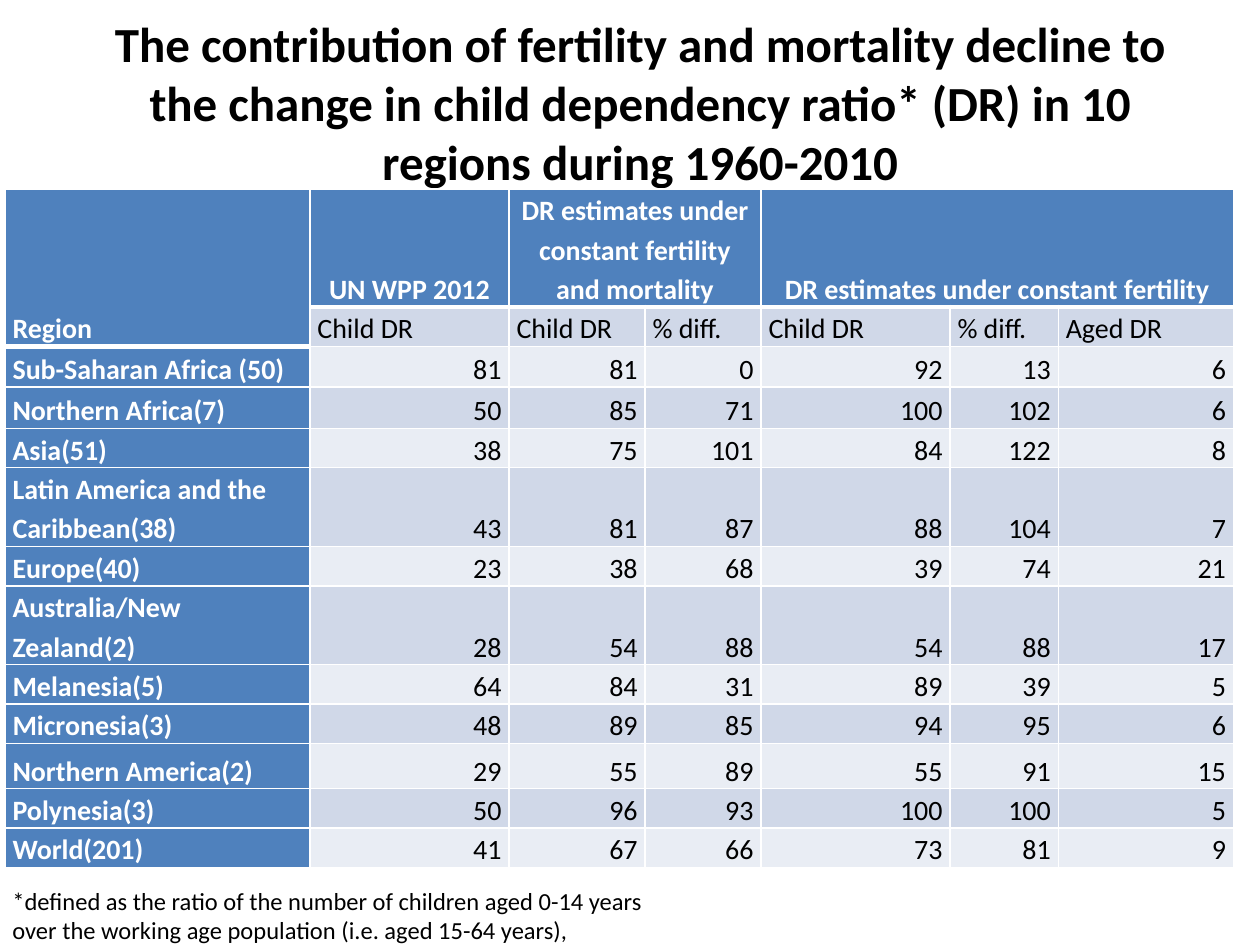
from pptx import Presentation
from pptx.dml.color import RGBColor
from pptx.enum.text import MSO_ANCHOR as Anchor, MSO_AUTO_SIZE as AutoSize, PP_ALIGN as Align
from pptx.oxml import parse_xml
from pptx.oxml.ns import nsdecls
from pptx.util import Inches, Pt

BLACK, WHITE, BLUE = "000000", "FFFFFF", "4F81BD"
BANDS = ("D0D8E8", "E9EDF4")


def color(hex_code):
    return RGBColor.from_string(hex_code)


class RatioSlide:
    """Holds the style and the slide; places and sizes are percent of the slide."""

    font_name = "Calibri"

    def __init__(self, deck):
        self.width, self.height = deck.slide_width, deck.slide_height
        self.slide = deck.slides.add_slide(deck.slide_layouts[5])

    def x(self, percent):
        return round(self.width * percent / 100)

    def y(self, percent):
        return round(self.height * percent / 100)

    def box(self, left, top, width, height):
        return self.x(left), self.y(top), self.x(width), self.y(height)

    def set_text(self, frame, text, size, ink=BLACK, bold=False, align=Align.LEFT, spacing=None):
        frame.word_wrap = True
        paragraph = frame.paragraphs[0]
        paragraph.text = text
        paragraph.alignment = align
        paragraph.line_spacing = spacing
        font = paragraph.font
        font.name, font.size, font.bold = self.font_name, Pt(size), bold
        font.color.rgb = color(ink)

    def title(self, text, place):
        heading = self.slide.shapes.title
        heading.left, heading.top, heading.width, heading.height = self.box(*place)
        frame = heading.text_frame
        frame.auto_size = AutoSize.NONE
        frame.vertical_anchor = Anchor.MIDDLE
        frame.margin_bottom = Inches(0.52)
        self.set_text(frame, text, 28, bold=True, align=Align.CENTER)

    def note(self, text, place):
        frame = self.slide.shapes.add_textbox(*self.box(*place)).text_frame
        self.set_text(frame, text, 14)
        frame.auto_size = AutoSize.SHAPE_TO_FIT_TEXT

    def borders(self, cell, bottom):
        properties = cell._tc.get_or_add_tcPr()
        for side, points in (("L", 1), ("R", 1), ("T", 1), ("B", bottom)):
            properties.append(parse_xml(
                f'<a:ln{side} {nsdecls("a")} w="{Pt(points)}"><a:solidFill>'
                f'<a:srgbClr val="{WHITE}"/></a:solidFill></a:ln{side}>'))

    def cell(self, cell, text, fill, ink, bold, align, bottom=1):
        self.borders(cell, bottom)
        cell.fill.solid()
        cell.fill.fore_color.rgb = color(fill)
        cell.vertical_anchor = Anchor.BOTTOM
        cell.margin_left = cell.margin_right = Inches(0.06)
        cell.margin_top = cell.margin_bottom = 0
        self.set_text(cell.text_frame, text, 16, ink, bold, align, 1.15)

    def table(self, rows, left, top, widths, heights, merges):
        place = self.box(left, top, sum(widths), sum(heights))
        grid = self.slide.shapes.add_table(len(rows), len(widths), *place).table
        for column, width in zip(grid.columns, widths):
            column.width = self.x(width)
        for row, height in zip(grid.rows, heights):
            row.height = self.y(height)
        for first, last in merges:
            grid.cell(*first).merge(grid.cell(*last))
        for r, values in enumerate(rows):
            for c, value in enumerate(values):
                heading = r == 0 or c == 0
                if c == 0 or r == 1:
                    align = Align.LEFT
                else:
                    align = Align.CENTER if r == 0 else Align.RIGHT
                self.cell(grid.cell(r, c), str(value),
                          BLUE if heading else BANDS[(r + 1) % 2],
                          WHITE if heading else BLACK, heading, align,
                          bottom=3 if r == 0 else 1)


def main():
    deck = Presentation()
    deck.slide_width, deck.slide_height = Inches(10), Inches(7.5)
    page = RatioSlide(deck)

    # Title
    page.title("The contribution of fertility and mortality decline to the change in child "
               "dependency ratio* (DR) in 10 regions during 1960-2010", (5.8, 5.6, 90, 16.67))

    # Two heading rows, then the ratios of each region
    headings = [
        ("Region", "UN WPP 2012", "DR estimates under constant fertility and mortality", "",
         "DR estimates under constant fertility", "", ""),
        ("", "Child DR", "Child DR", "% diff.", "Child DR", "% diff.", "Aged DR"),
    ]
    regions = [
        ("Sub-Saharan Africa (50)", 81, 81, 0, 92, 13, 6),
        ("Northern Africa(7)", 50, 85, 71, 100, 102, 6),
        ("Asia(51)", 38, 75, 101, 84, 122, 8),
        ("Latin America and the Caribbean(38)", 43, 81, 87, 88, 104, 7),
        ("Europe(40)", 23, 38, 68, 39, 74, 21),
        ("Australia/New Zealand(2)", 28, 54, 88, 54, 88, 17),
        ("Melanesia(5)", 64, 84, 31, 89, 39, 5),
        ("Micronesia(3)", 48, 89, 85, 94, 95, 6),
        ("Northern America(2)", 29, 55, 89, 55, 91, 15),
        ("Polynesia(3)", 50, 96, 93, 100, 100, 5),
        ("World(201)", 41, 67, 66, 73, 81, 9),
    ]
    line = 3.73
    page.table(
        headings + regions, left=0.4, top=20,
        widths=(24.2, 15.8, 10.8, 9.2, 15, 8.6, 13.9),
        heights=(10.8, line, 4.27, 4.4, line, 8.27, line, 7.6, line, line, 4.8, line, line),
        merges=(((0, 0), (1, 0)), ((0, 2), (0, 3)), ((0, 4), (0, 6))))

    # Footnote
    page.note("*defined as the ratio of the number of children aged 0-14 years over the "
              "working age population (i.e. aged 15-64 years),", (0, 93.07, 53.3, 7.6))

    deck.save("out.pptx")


if __name__ == "__main__":
    main()
